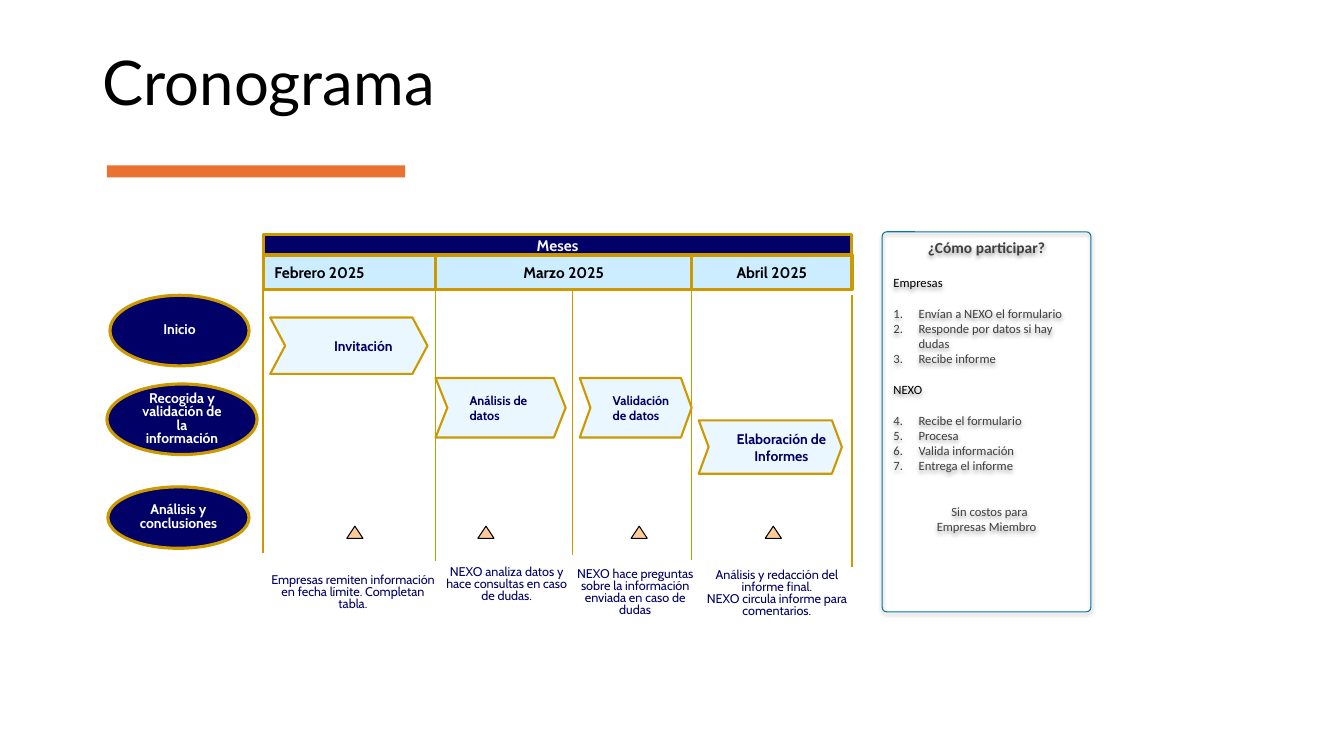
"""Build the project schedule slide."""
from copy import deepcopy

from lxml import etree
from pptx import Presentation
from pptx import util as u
from pptx.dml.color import RGBColor
from pptx.enum import shapes, text
from pptx.oxml.ns import qn

COLORS = {"navy": "000066", "gold": "CC9900", "sky": "CCECFF", "pale": "EBF7FF",
          "peach": "FFCC99", "orange": "E97132", "teal": "0B76A0", "gray": "3F3F3F",
          "white": "FFFFFF", "smoke": "F8F8F8", "black": "000000"}
KIND = shapes.MSO_SHAPE
LEFT, CENTER = text.PP_ALIGN.LEFT, text.PP_ALIGN.CENTER
TOP, MIDDLE = text.MSO_ANCHOR.TOP, text.MSO_ANCHOR.MIDDLE

EDGES = [2.61, 4.32, 5.68, 6.86, 8.45]
GUIDES = [(2.87, 5.49), (2.87, 5.57), (2.87, 5.51), (2.87, 5.56), (2.93, 5.63)]
MONTHS = [("Febrero 2025", 0, 1, LEFT, 0.07), ("Marzo 2025", 1, 3, CENTER, 0),
          ("Abril 2025", 3, 4, CENTER, 0)]
PHASES = [("Inicio", 1.09, 2.93, 1.38, 0.7),
          ("Recogida y\nvalidación de la\ninformación", 1.06, 3.81, 1.49, 0.7),
          ("Análisis y\nconclusiones", 1.07, 4.83, 1.4, 0.61)]
STEPS = [("Invitación", 0.07, 3.15, 1.56, 0.56, 0.266, 10, CENTER, 0.21),
         ("Análisis de datos", 0, 3.75, 1.29, 0.59, 0.198, 9, LEFT, 0.14),
         ("Validación de datos", 0.07, 3.75, 1.11, 0.59, 0.18, 9, LEFT, 0.14),
         ("Elaboración de Informes", 0.07, 4.17, 1.42, 0.53, 0.186, 10, CENTER, 0.14)]
MILESTONES = [3.52, 4.82, 6.34, 7.67]
NOTES = [(["Empresas remiten información en fecha límite. Completan tabla."],
          2.64, 5.66, 1.72),
         (["NEXO analiza datos y hace consultas en caso de dudas."], 4.37, 5.58, 1.31),
         (["NEXO hace preguntas sobre la información enviada en caso de dudas"],
          5.63, 5.6, 1.34),
         (["Análisis y redacción del informe final.",
           "NEXO circula informe para comentarios."], 6.93, 5.61, 1.55)]
ROLES = [("Empresas", 13.4, ["Envían a NEXO el formulario",
                             "Responde por datos si hay dudas", "Recibe informe"]),
         ("NEXO", 11, ["Recibe el formulario", "Procesa", "Valida información",
                       "Entrega el informe"])]
CLOSING = [("Sin costos para", 22, 0.06), ("Empresas Miembro", 0, 0)]

deck = Presentation()
deck.slide_width, deck.slide_height = u.Inches(13.33), u.Inches(7.5)
slide = deck.slides.add_slide(deck.slide_layouts[6])


def rgb(name):
    return RGBColor.from_string(COLORS[name])


def set_frame(frame, anchor, insets):
    frame.word_wrap = True
    frame.vertical_anchor = anchor
    (frame.margin_left, frame.margin_top,
     frame.margin_right, frame.margin_bottom) = map(u.Inches, insets)
    return frame


def write(frame, words, size=9, color="navy", font="Cabin", bold=False, align=CENTER,
          spacing=None, indent=0, before=0, number=None):
    first = frame.paragraphs[0]
    para = frame.add_paragraph() if first.runs else first
    para.text = words
    para.alignment = align
    para.space_before = u.Pt(before)
    if spacing:
        para.line_spacing = spacing
    for run in para.runs:
        run.font.size, run.font.name, run.font.bold = u.Pt(size), font, bold
        run.font.color.rgb = rgb(color)
    for line_break in para._p.findall(qn("a:br")):
        line_break.append(deepcopy(para.runs[0]._r.rPr))
    props = para._p.get_or_add_pPr()
    props.set("marL", str(u.Inches(indent)))
    if number:
        props.set("indent", str(-u.Inches(indent)))
        etree.SubElement(props, qn("a:buFont"), typeface="+mj-lt")
        etree.SubElement(props, qn("a:buAutoNum"), type="arabicPeriod",
                         startAt=str(number))


def draw(kind, left, top, width, height, fill=None, line=None, weight=1, adjust=None):
    shape = slide.shapes.add_shape(kind, *map(u.Inches, (left, top, width, height)))
    shape.shadow.inherit = False
    if fill:
        shape.fill.solid()
        shape.fill.fore_color.rgb = rgb(fill)
    else:
        shape.fill.background()
    if line:
        shape.line.color.rgb = rgb(line)
        shape.line.width = u.Pt(weight)
    else:
        shape.line.fill.background()
    if adjust is not None:
        shape.adjustments[0] = adjust
    return shape


def text_box(left, top, width, height, anchor, insets):
    box = slide.shapes.add_textbox(*map(u.Inches, (left, top, width, height)))
    return set_frame(box.text_frame, anchor, insets)


def draw_guides():
    for edge, (top, bottom) in zip(EDGES, GUIDES):
        guide = slide.shapes.add_connector(
            shapes.MSO_CONNECTOR.STRAIGHT, *map(u.Inches, (edge, top, edge, bottom)))
        guide.line.color.rgb = rgb("gold")
        guide.line.width = u.Pt(1)
        etree.SubElement(guide._element.spPr, qn("a:effectLst"))


def draw_header():
    tight = [0.04] * 4
    banner = draw(KIND.RECTANGLE, EDGES[0], 2.33, EDGES[-1] - EDGES[0], 0.2,
                  "navy", "gold", 2.25)
    write(set_frame(banner.text_frame, MIDDLE, tight), "Meses", 11, "smoke", bold=True)
    for name, start, end, align, indent in MONTHS:
        month = draw(KIND.RECTANGLE, EDGES[start], 2.53, EDGES[end] - EDGES[start], 0.34,
                     "sky", "gold", 2.25)
        write(set_frame(month.text_frame, MIDDLE, tight), name, 11, "black", bold=True,
              align=align, indent=indent)


def draw_schedule():
    for name, *place in PHASES:
        phase = draw(KIND.OVAL, *place, "navy", "gold", 2.25)
        write(set_frame(phase.text_frame, MIDDLE, (0.1, 0.05, 0.1, 0.05)), name, 10,
              "white", bold=True, spacing=0.8)
    for edge, (name, shift, top, width, height, point, size, align, indent) in zip(
            EDGES, STEPS):
        step = draw(KIND.CHEVRON, edge + shift, top, width, height, "pale", "gold", 1.5,
                    point)
        write(set_frame(step.text_frame, MIDDLE, (0.08, 0.04, 0, 0.04)), name, size,
              bold=True, align=align, indent=indent)
    for center in MILESTONES:
        draw(KIND.ISOSCELES_TRIANGLE, center - 0.08, 5.22, 0.16, 0.12,
             "peach", "black", 0.75)
    for lines, left, top, width in NOTES:
        note = text_box(left, top, width, 0.55, TOP, [0.04] * 4)
        for line in lines:
            write(note, line, spacing=0.8)


def draw_panel():
    panel = draw(KIND.ROUNDED_RECTANGLE, 8.75, 2.3, 2.07, 3.77, None, "teal", 0.75, 0.022)
    effects = panel._element.spPr.find(qn("a:effectLst"))
    shadow = etree.SubElement(effects, qn("a:outerShdw"), blurRad=str(u.Pt(3.1)),
                              dist=str(u.Pt(1.6)), dir="5400000", rotWithShape="0")
    tint = etree.SubElement(shadow, qn("a:srgbClr"), val=COLORS["black"])
    etree.SubElement(tint, qn("a:alpha"), val="38000")
    frame = set_frame(panel.text_frame, TOP, (0.1, 0.05, 0.1, 0.05))
    write(frame, "¿Cómo participar?", 11, "gray", "Calibri", bold=True)
    number = 1
    for role, gap, tasks in ROLES:
        write(frame, role, 9, "black", "Calibri", align=LEFT, before=gap)
        for index, task in enumerate(tasks):
            write(frame, task, 9, "gray", "Calibri", align=LEFT, indent=0.25,
                  before=0 if index else 11, number=number)
        number += len(tasks)
    for line, gap, indent in CLOSING:
        write(frame, line, 9, "gray", "Calibri", before=gap, indent=indent)


write(text_box(0.92, 0.4, 11.5, 0.9, MIDDLE, (0.1, 0.05, 0.1, 0.05)), "Cronograma", 44,
      "black", "Lato", align=LEFT, spacing=0.9)
draw(KIND.RECTANGLE, 1.06, 1.64, 2.96, 0.12, "orange")
draw_guides()
draw_header()
draw_schedule()
draw_panel()
deck.save("out.pptx")
